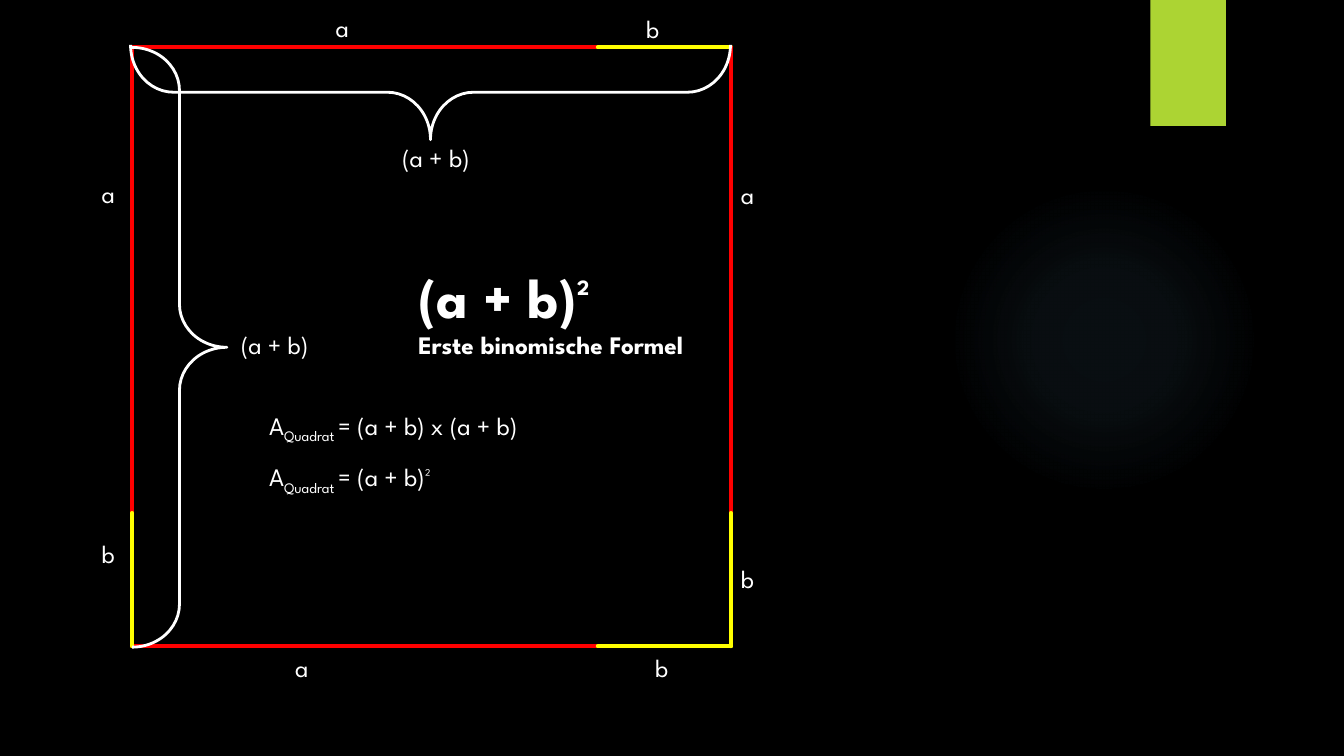
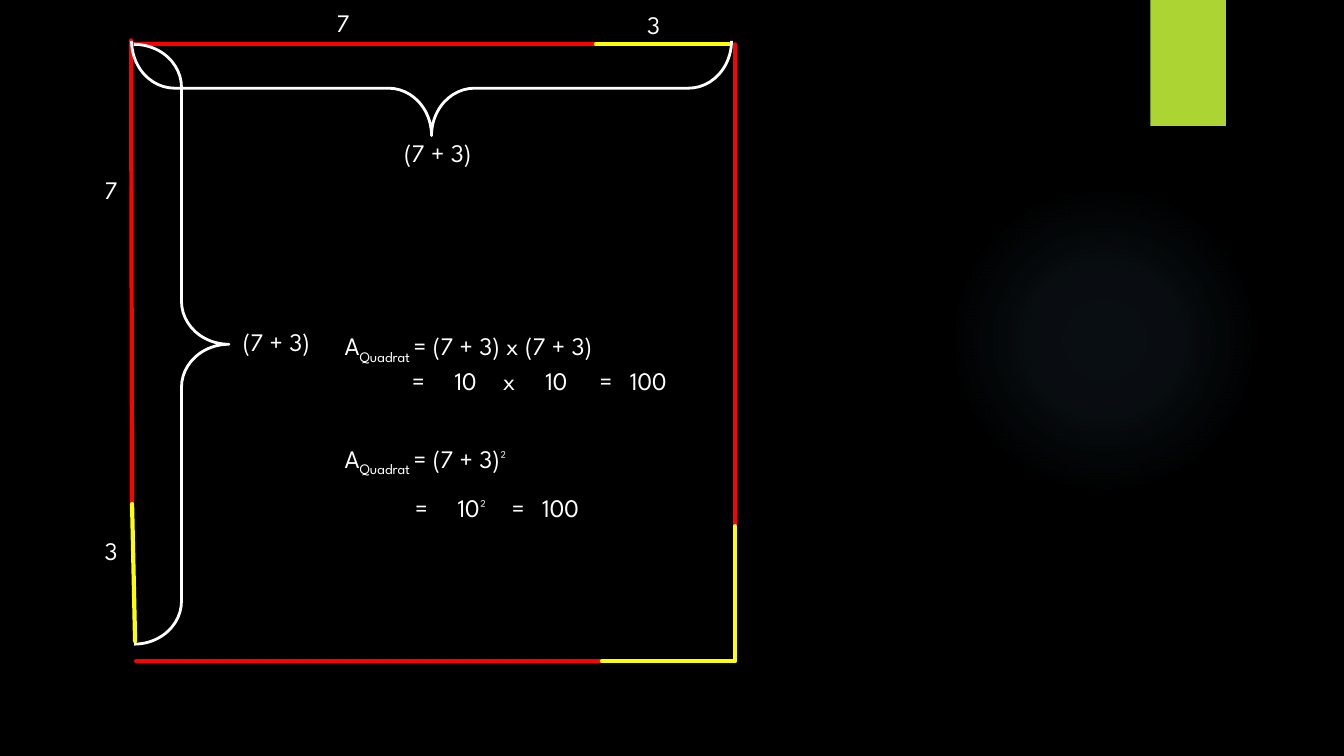
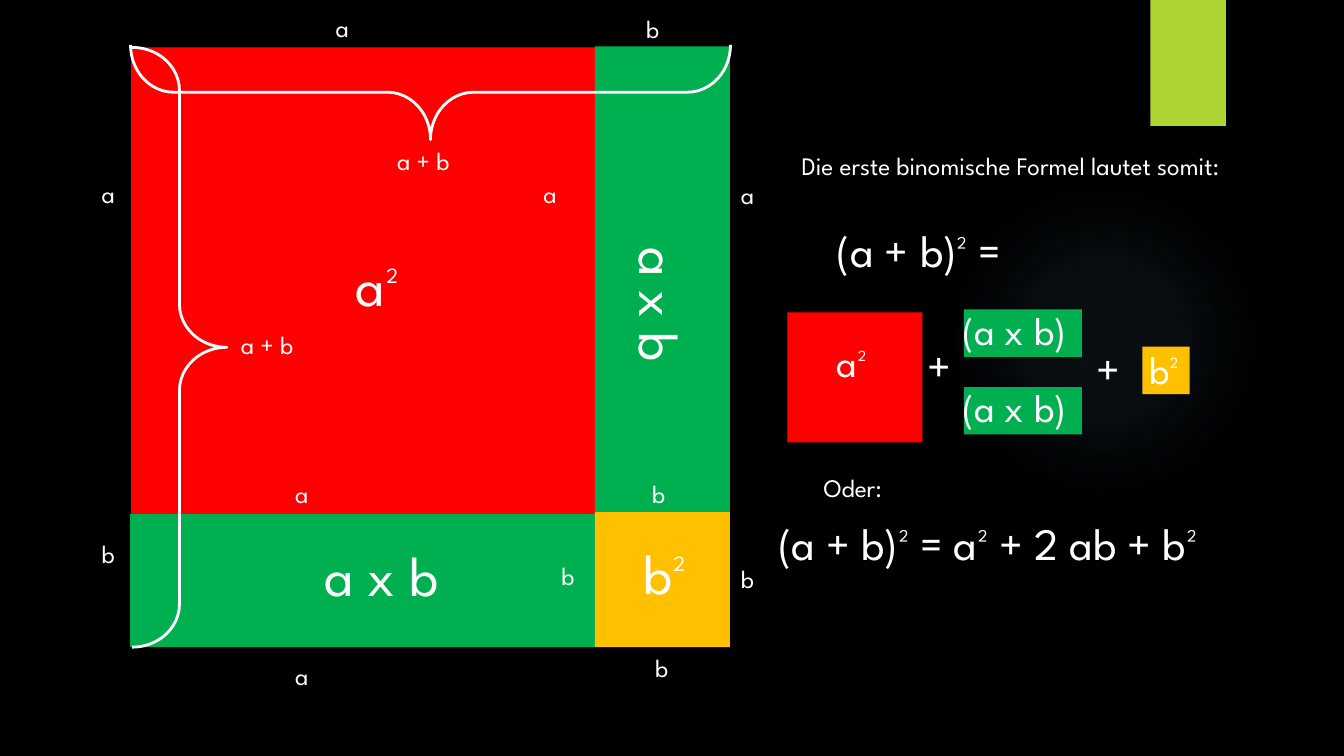
from dataclasses import dataclass
from typing import Iterable, NamedTuple

from lxml.etree import SubElement
from pptx import Presentation
from pptx.dml.color import RGBColor
from pptx.enum.shapes import MSO_CONNECTOR, MSO_SHAPE
from pptx.enum.text import MSO_ANCHOR, MSO_AUTO_SIZE, PP_ALIGN
from pptx.oxml import parse_xml
from pptx.oxml.ns import nsdecls, qn
from pptx.util import Inches, Pt


@dataclass(frozen=True)
class Theme:
    font: str = "League Spartan"
    black: str = "000000"
    white: str = "FFFFFF"
    red: str = "FF0000"
    yellow: str = "FFFF00"
    green: str = "00B050"
    amber: str = "FFC000"
    lime: str = "ACD433"
    glow: str = "7AC4F0"
    body: int = 18
    term: int = 28
    formula: int = 32
    display: int = 40
    edge: float = 3
    brace: float = 2


T = Theme()


class Label(NamedTuple):
    x: float
    y: float
    w: float
    text: str
    size: int = T.body
    rot: float = 0


class Tile(NamedTuple):
    x: float
    y: float
    w: float
    h: float
    color: str


class Edge(NamedTuple):
    """Side of the square: red up to the split, yellow after it."""
    start: tuple[float, float]
    split: tuple[float, float]
    end: tuple[float, float]


class Run(NamedTuple):
    text: str
    size: int = T.body
    bold: bool = False
    baseline: int = 0


class Para(NamedTuple):
    runs: list[Run]
    spacing: float = 1
    before: float = 0
    tabs: tuple[float, ...] = ()


def rgb(color: str) -> RGBColor:
    return RGBColor.from_string(color)


# Text
def write(tf, paras: Iterable[Para]) -> None:
    tf.word_wrap = True
    tf.auto_size = MSO_AUTO_SIZE.NONE
    tf.vertical_anchor = MSO_ANCHOR.TOP
    for i, para in enumerate(paras):
        p = tf.add_paragraph() if i else tf.paragraphs[0]
        if para.tabs:
            tabs = SubElement(p._p.get_or_add_pPr(), qn("a:tabLst"))
            for pos in para.tabs:
                SubElement(tabs, qn("a:tab"), pos=str(Inches(pos)), algn="l")
        p.alignment = PP_ALIGN.LEFT
        p.line_spacing = para.spacing
        if para.before:
            p.space_before = Pt(para.before)
        for run in para.runs:
            r = p.add_run()
            r.text = run.text
            r.font.name, r.font.size, r.font.bold = T.font, Pt(run.size), run.bold
            r.font.color.rgb = rgb(T.white)
            if run.baseline:
                r._r.get_or_add_rPr().set("baseline", str(run.baseline * 1000))


def add_text(s, x: float, y: float, w: float, h: float, paras: Iterable[Para]):
    sp = s.shapes.add_textbox(Inches(x), Inches(y), Inches(w), Inches(h))
    write(sp.text_frame, paras)
    return sp


def add_labels(s, labels: Iterable[Label]) -> None:
    for lb in labels:
        height = lb.size * 1.2 / 72 + 0.1
        sp = add_text(s, lb.x, lb.y, lb.w, height, [Para([Run(lb.text, lb.size)])])
        sp.rotation = lb.rot


def set_title(s, x: float, y: float, w: float, h: float, paras: Iterable[Para]) -> None:
    sp = s.shapes.title
    sp.left, sp.top, sp.width, sp.height = map(Inches, (x, y, w, h))
    write(sp.text_frame, paras)


def area(formula: str, spacing: float = 1, before: float = 0) -> Para:
    return Para([Run("A"), Run("Quadrat ", baseline=-25), Run(formula)], spacing, before)


# Shapes
def add_tile(s, tile: Tile, kind: MSO_SHAPE = MSO_SHAPE.RECTANGLE):
    sp = s.shapes.add_shape(kind, *map(Inches, tile[:4]))
    sp.shadow.inherit = False
    sp.fill.solid()
    sp.fill.fore_color.rgb = rgb(tile.color)
    sp.line.fill.background()
    return sp


def add_edges(s, edges: Iterable[Edge]) -> None:
    for edge in edges:
        for a, b, color in ((edge.start, edge.split, T.red), (edge.split, edge.end, T.yellow)):
            cx = s.shapes.add_connector(MSO_CONNECTOR.STRAIGHT, *map(Inches, (*a, *b)))
            cx.line.color.rgb = rgb(color)
            cx.line.width = Pt(T.edge)
            cx.line._get_or_add_ln().set("cap", "rnd")
            SubElement(cx._element.spPr, qn("a:effectLst"))


def add_brace(s, x: float, y: float, rot: float) -> None:
    sp = s.shapes.add_shape(MSO_SHAPE.LEFT_BRACE, Inches(x), Inches(y), Inches(0.94), Inches(5.95))
    sp.rotation = rot
    sp.adjustments[0] = 0.454
    sp.shadow.inherit = False
    sp.fill.background()
    sp.line.color.rgb = rgb(T.white)
    sp.line.width = Pt(T.brace)


def add_braces(s, left: tuple[float, float], top: tuple[float, float]) -> None:
    add_brace(s, *left, 180)
    add_brace(s, *top, 270)


def add_side_labels(s, bottom_a: float) -> None:
    add_labels(s, [
        Label(3.23, 0.07, 0.54, "a"), Label(6.31, 0.08, 0.54, "b"),
        Label(7.25, 1.73, 0.8, "a"), Label(7.25, 5.54, 0.54, "b"),
        Label(2.83, bottom_a, 0.8, "a"), Label(6.4, 6.42, 0.54, "b"),
        Label(0.91, 1.72, 0.8, "a"), Label(0.91, 5.29, 0.54, "b"),
    ])


# Shared backdrop, kept on the slide master
def set_backdrop(prs, s) -> None:
    master = prs.slide_master
    master.background.fill.solid()
    master.background.fill.fore_color.rgb = rgb(T.black)
    glow = add_tile(s, Tile(9.41, 1.83, 3.08, 3.08, T.glow), MSO_SHAPE.OVAL)
    stops = "".join(
        f'<a:gs pos="{pos}000"><a:srgbClr val="{T.glow}"><a:alpha val="{alpha}000"/></a:srgbClr></a:gs>'
        for pos, alpha in ((0, 7), (36, 6), (69, 0)))
    grad = parse_xml(
        f'<a:gradFill {nsdecls("a")} rotWithShape="1"><a:gsLst>{stops}</a:gsLst><a:path path="circle">'
        '<a:fillToRect l="50000" t="50000" r="50000" b="50000"/></a:path></a:gradFill>')
    sppr = glow._element.spPr
    sppr.replace(sppr.find(qn("a:solidFill")), grad)
    flag = add_tile(s, Tile(11.41, 0, 0.75, 1.25, T.lime))
    for sp in (glow, flag):
        master.shapes.element.append(sp._element)


# Slide 1: the square in letters
def letters_slide(s) -> None:
    left, split_x, right = 1.31, 5.93, 7.25
    top, split_y, bottom = 0.47, 5.09, 6.41
    add_edges(s, [Edge((left, y), (split_x, y), (right, y)) for y in (top, bottom)])
    add_edges(s, [Edge((x, top), (x, split_y), (x, bottom)) for x in (left, right)])
    add_side_labels(s, 6.42)
    add_braces(s, (1.31, 0.47), (3.8, -2.06))
    add_labels(s, [Label(2.29, 3.22, 1.08, "(a + b)"), Label(3.89, 1.36, 1.46, "(a + b)")])
    add_text(s, 2.57, 4.02, 3.74, 0.81, [area("= (a + b) x (a + b)"), area("= (a + b)²", 1.5)])
    set_title(s, 4.05, 2.55, 3.55, 1.08, [
        Para([Run("(a + b)²", T.display, True)]),
        Para([Run("Erste binomische Formel", T.body, True)]),
    ])


# Slide 2: the square in numbers
def numbers_slide(s) -> None:
    add_edges(s, [
        Edge((1.3, 0.4), (1.31, 5), (1.34, 6.36)),
        Edge((1.31, 0.44), (5.91, 0.44), (7.23, 0.44)),
        Edge((7.29, 0.44), (7.29, 5.22), (7.29, 6.54)),
        Edge((1.35, 6.56), (5.97, 6.56), (7.29, 6.56)),
    ])
    add_braces(s, (1.33, 0.44), (3.81, -2.1))
    add_labels(s, [
        Label(0.94, 1.68, 0.8, "7"), Label(0.94, 5.26, 0.54, "3"),
        Label(3.24, 0.02, 0.54, "7"), Label(6.32, 0.04, 0.53, "3"),
        Label(2.31, 3.19, 1.08, "(7 + 3)"), Label(3.91, 1.31, 1.29, "(7 + 3)"),
    ])
    add_text(s, 3.32, 3.23, 4.3, 1.87, [
        area("= (7 + 3) x (7 + 3)"),
        Para([Run("\t=\t10\tx\t10\t=\t100")], tabs=(0.67, 1.09, 1.57, 1.99, 2.53, 2.83)),
        area("= (7 + 3)²", 1.5, 22),
        Para([Run("\t=\t10²\t=\t100")], 1.5, tabs=(0.7, 1.12, 1.66, 1.96)),
    ])


# Slide 3: the four areas and the formula
def areas_slide(s) -> None:
    add_side_labels(s, 6.5)
    for tile in (
        Tile(1.3, 0.47, 4.61, 4.63, T.red),
        Tile(1.29, 5.1, 4.61, 1.32, T.green),
        Tile(5.9, 0.46, 1.34, 4.64, T.green),
        Tile(5.9, 5.08, 1.34, 1.34, T.amber),
        Tile(7.81, 3.1, 1.34, 1.29, T.red),
        Tile(9.56, 3.07, 1.17, 0.47, T.green),
        Tile(9.56, 3.84, 1.17, 0.47, T.green),
        Tile(11.33, 3.44, 0.47, 0.47, T.amber),
    ):
        add_tile(s, tile)
    add_braces(s, (1.31, 0.47), (3.8, -2.06))
    add_labels(s, [
        # Inside the square
        Label(3.43, 2.44, 1, "a²", T.display),
        Label(6.28, 5.29, 0.88, "b²", T.display),
        Label(3.12, 5.31, 1.75, "a x b", T.display),
        Label(5.7, 2.83, 1.72, "a x b", T.display, 90),
        Label(5.47, 5.51, 0.53, "b"), Label(6.37, 4.7, 0.53, "b"),
        Label(2.83, 4.7, 0.8, "a"), Label(5.29, 1.72, 0.8, "a"),
        Label(2.29, 3.22, 0.94, "a + b"), Label(3.84, 1.39, 0.93, "a + b"),
        # Formula beside it
        Label(8.2, 2.16, 2.62, "(a + b)² =", T.formula),
        Label(8.2, 3.31, 1, "a²", T.term),
        Label(9.1, 3.3, 0.28, "+", T.formula),
        Label(9.45, 2.99, 1.75, "(a x b)", T.term),
        Label(9.45, 3.75, 1.75, "(a x b)", T.term),
        Label(10.78, 3.33, 0.28, "+", T.formula),
        Label(11.3, 3.38, 1, "b²", T.term),
        Label(8.07, 4.64, 1.87, "Oder:"),
        Label(7.62, 5.07, 5.41, "(a + b)² = a² + 2 ab + b²", T.formula),
    ])
    set_title(s, 7.85, 1.44, 4.6, 0.4, [Para([Run("Die erste binomische Formel lautet somit:")])])


def main() -> None:
    prs = Presentation()
    prs.slide_width, prs.slide_height = Inches(13.33), Inches(7.5)
    title_only, blank = prs.slide_layouts[5], prs.slide_layouts[6]
    for layout, build in ((title_only, letters_slide), (blank, numbers_slide), (title_only, areas_slide)):
        s = prs.slides.add_slide(layout)
        if len(prs.slides) == 1:
            set_backdrop(prs, s)
        build(s)
    prs.save("out.pptx")


if __name__ == "__main__":
    main()
